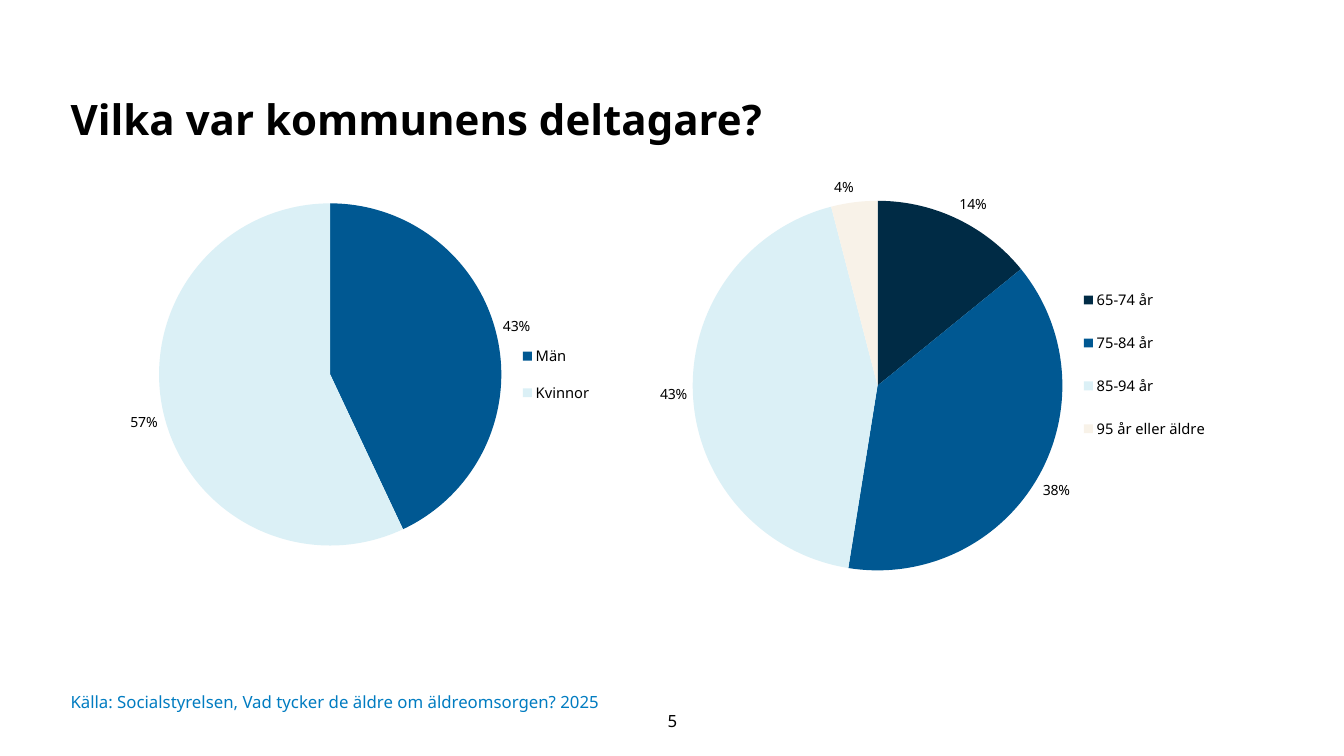
from lxml import etree
from pptx import Presentation
from pptx import util as u
from pptx.chart.data import CategoryChartData
from pptx.dml.color import RGBColor
from pptx.enum import chart as charts, text
from pptx.oxml.ns import qn

COLORS = {
    "black": "000000",
    "navy": "002B45",
    "blue": "005892",
    "ice": "DBF0F6",
    "cream": "F8F2E8",
    "source": "017CC1",
}


class SlideBuilder:
    """Holds the style and the current slide, and adds its elements."""

    font = "Noto Sans"

    def __init__(self, presentation):
        self.slide = presentation.slides.add_slide(presentation.slide_layouts[5])

    def color(self, name):
        return RGBColor.from_string(COLORS[name])

    def style(self, font, size, color="black", bold=False):
        font.name = self.font
        font.size = u.Pt(size)
        font.bold = bold
        font.color.rgb = self.color(color)

    def fill_text(self, shape, words, size, color, align, anchor, margins, bold=False):
        frame = shape.text_frame
        frame.word_wrap = True
        frame.auto_size = text.MSO_AUTO_SIZE.NONE
        frame.vertical_anchor = anchor
        (frame.margin_left, frame.margin_top,
         frame.margin_right, frame.margin_bottom) = map(u.Inches, margins)
        paragraph = frame.paragraphs[0]
        paragraph.alignment = align
        run = paragraph.add_run()
        run.text = words
        self.style(run.font, size, color, bold)
        return paragraph

    def title(self, words, box):
        shape = self.slide.shapes.title
        shape.left, shape.top, shape.width, shape.height = map(u.Inches, box)
        paragraph = self.fill_text(shape, words, 30, "black", text.PP_ALIGN.LEFT,
                                   text.MSO_ANCHOR.TOP, (0, 0, 0.1, 0.05), bold=True)
        paragraph.line_spacing = 1.1

    def label(self, words, box, color="black", align=text.PP_ALIGN.LEFT,
              margins=(0, 0, 0, 0)):
        shape = self.slide.shapes.add_textbox(*map(u.Inches, box))
        self.fill_text(shape, words, 12, color, align, text.MSO_ANCHOR.MIDDLE, margins)

    def place(self, parent, index, area, inner=False):
        for old in parent.findall(qn("c:layout")):
            parent.remove(old)
        layout = etree.Element(qn("c:layout"))
        manual = etree.SubElement(layout, qn("c:manualLayout"))
        settings = [("layoutTarget", "inner")] if inner else []
        settings += [("xMode", "edge"), ("yMode", "edge")]
        settings += zip("xywh", area)
        for tag, value in settings:
            etree.SubElement(manual, qn(f"c:{tag}")).set("val", str(value))
        parent.insert(index, layout)

    def pie(self, box, slices, plot_area, legend_area):
        data = CategoryChartData()
        data.categories = [name for name, _, _ in slices]
        data.add_series("Series 1", [value for _, value, _ in slices])
        chart = self.slide.shapes.add_chart(
            charts.XL_CHART_TYPE.PIE, *map(u.Inches, box), data).chart
        self.style(chart.font, 10)
        chart.has_title = False
        chart.has_legend = True
        legend = chart.legend
        legend.position = charts.XL_LEGEND_POSITION.RIGHT
        legend.include_in_layout = False
        self.style(legend.font, 10.5)

        plot = chart.plots[0]
        plot.vary_by_categories = True
        plot.has_data_labels = True
        labels = plot.data_labels
        labels.show_percentage = True
        labels.show_value = False
        labels.number_format = "0%"
        labels.number_format_is_linked = False
        labels.position = charts.XL_LABEL_POSITION.OUTSIDE_END
        self.style(labels.font, 10)
        for index, (_, _, color) in enumerate(slices):
            point = plot.series[0].points[index].format
            point.fill.solid()
            point.fill.fore_color.rgb = self.color(color)
            point.line.fill.background()

        chart_space = chart._chartSpace
        self.place(chart_space.find(".//" + qn("c:plotArea")), 0, plot_area, inner=True)
        self.place(chart_space.find(".//" + qn("c:legend")), 1, legend_area)


def main():
    presentation = Presentation()
    presentation.slide_width = u.Inches(13.33)
    presentation.slide_height = u.Inches(7.5)
    builder = SlideBuilder(presentation)
    builder.title("Vilka var kommunens deltagare?", (0.7, 0.88, 10.63, 0.53))
    builder.pie((0.22, 1.29, 6.79, 4.71),
                [("Män", 43, "blue"), ("Kvinnor", 57, "ice")],
                (0.2, 0.12, 0.5, 0.79), (0.72, 0.42, 0.12, 0.19))
    builder.pie((5.92, 1.6, 6.79, 4.2),
                [("65-74 år", 14, "navy"), ("75-84 år", 38, "blue"),
                 ("85-94 år", 43, "ice"), ("95 år eller äldre", 4, "cream")],
                (0.14, 0.09, 0.54, 0.88), (0.7, 0.25, 0.2, 0.46))
    builder.label("Källa: Socialstyrelsen, Vad tycker de äldre om äldreomsorgen? 2025",
                  (0.7, 6.76, 5.56, 0.4), "source")
    builder.label("5", (6.16, 6.95, 1.02, 0.4), align=text.PP_ALIGN.CENTER,
                  margins=(0.1, 0.05, 0.1, 0.05))
    presentation.save("out.pptx")


if __name__ == "__main__":
    main()
